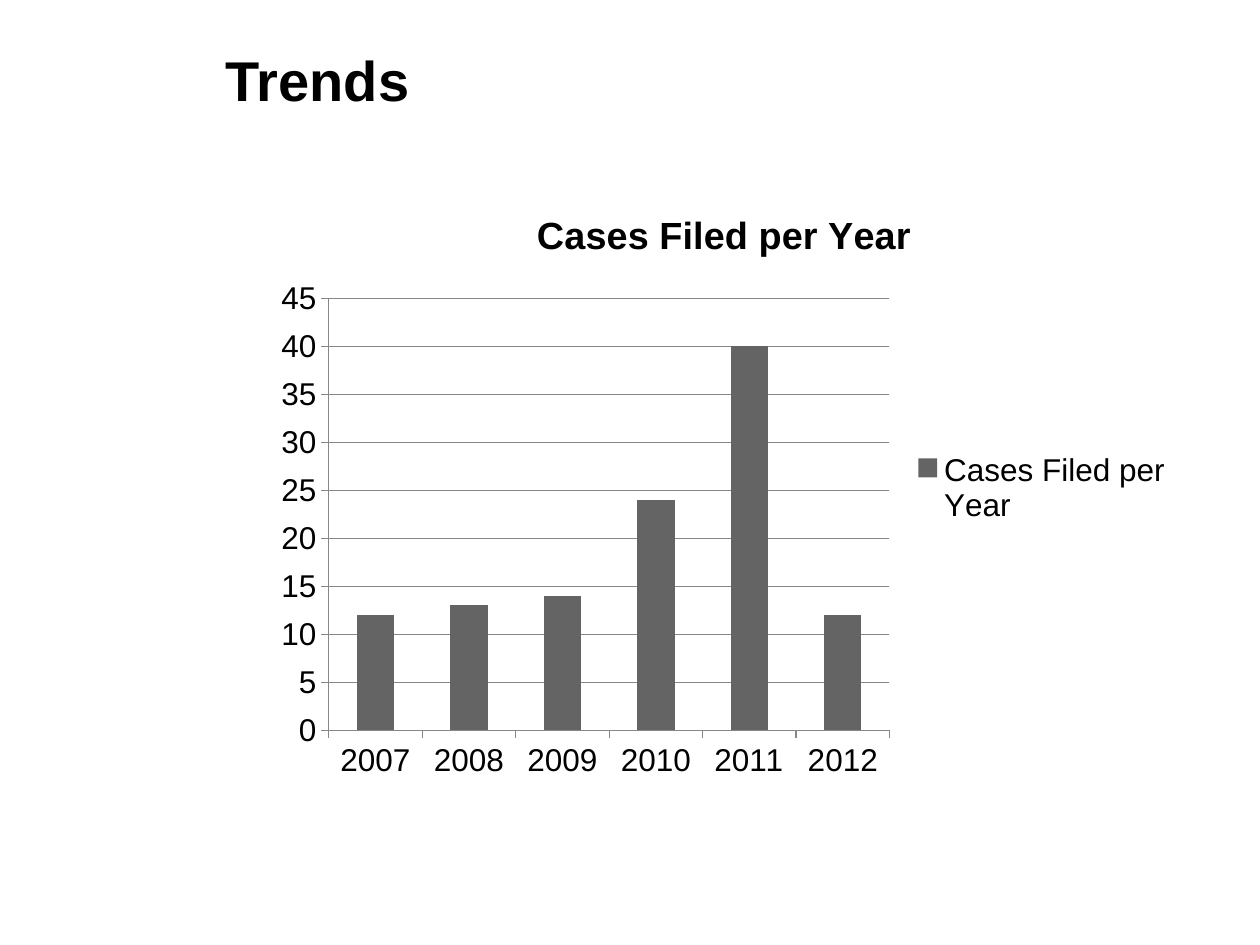
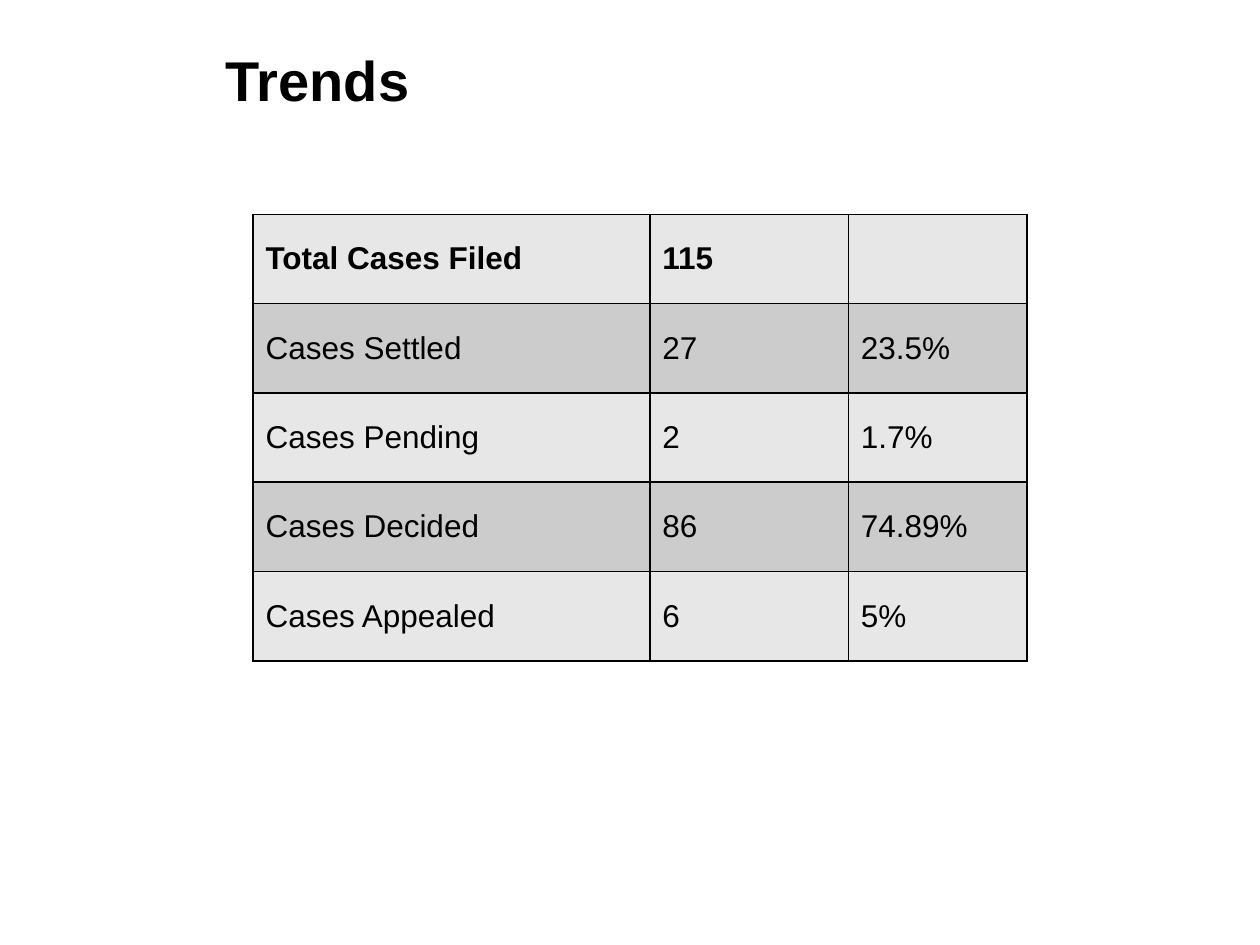
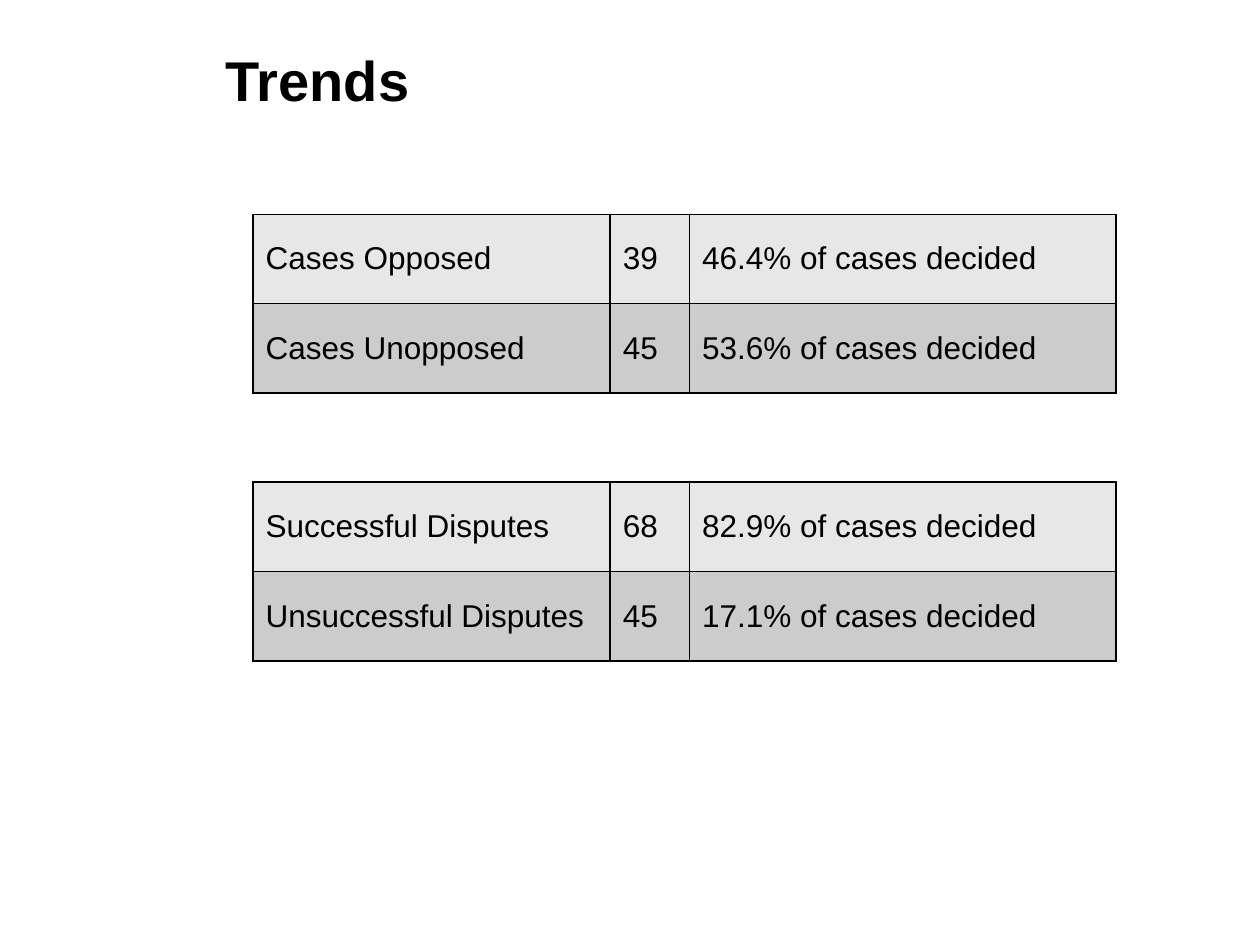
"""Builds three slides on case trends: a column chart and three tables."""
import pptx
import pptx.chart.data
import pptx.dml.color
import pptx.enum.chart
import pptx.enum.text
import pptx.oxml
import pptx.oxml.ns
import pptx.util

Cm = pptx.util.Cm
Pt = pptx.util.Pt

HEADING = "Trends"
FILINGS_NAME = "Cases Filed per Year"
FILINGS = {"2007": 12, "2008": 13, "2009": 14, "2010": 24, "2011": 40, "2012": 12}
OUTCOMES = [
    ("Total Cases Filed", "115", ""),
    ("Cases Settled", "27", "23.5%"),
    ("Cases Pending", "2", "1.7%"),
    ("Cases Decided", "86", "74.89%"),
    ("Cases Appealed", "6", "5%"),
]
OPPOSITION = [
    ("Cases Opposed", "39", "46.4% of cases decided"),
    ("Cases Unopposed", "45", "53.6% of cases decided"),
]
DISPUTES = [
    ("Successful Disputes", "68", "82.9% of cases decided"),
    ("Unsuccessful Disputes", "45", "17.1% of cases decided"),
]

FONT = "Arial"
INK = "000000"
BAR = "646464"
AXIS = "878787"
BANDS = ("E7E7E7", "CCCCCC")
BODY_SIZE = 18
TABLE_LEFT, TABLE_TOP, ROW_HEIGHT = 5.1, 4.32, 1.8
OUTCOME_COLUMNS = (8, 4, 3.6)
SHARE_COLUMNS = (7.2, 1.6, 8.6)


def color(hex_code):
    return pptx.dml.color.RGBColor.from_string(hex_code)


def style(font, size=BODY_SIZE, bold=False):
    font.name = FONT
    font.size = Pt(size)
    font.bold = bold
    font.color.rgb = color(INK)


def add_titled_slide(deck):
    slide = deck.slides.add_slide(deck.slide_layouts[6])
    frame = slide.shapes.add_textbox(Cm(4.3), Cm(0), Cm(21.1), Cm(3.18)).text_frame
    frame.word_wrap = True
    frame.vertical_anchor = pptx.enum.text.MSO_ANCHOR.MIDDLE
    frame.text = HEADING
    style(frame.paragraphs[0].runs[0].font, 32, True)
    return slide


def add_borders(cell):
    properties = cell._tc.get_or_add_tcPr()
    for position, side in enumerate(("lnL", "lnR", "lnT", "lnB")):
        border = pptx.oxml.parse_xml(
            f'<a:{side} {pptx.oxml.ns.nsdecls("a")} w="12700"><a:solidFill>'
            f'<a:srgbClr val="{INK}"/></a:solidFill></a:{side}>'
        )
        properties.insert(position, border)


def add_cases_table(slide, rows, columns, top=TABLE_TOP, bold_first=False):
    table = slide.shapes.add_table(
        len(rows), len(columns), Cm(TABLE_LEFT), Cm(top),
        Cm(sum(columns)), Cm(ROW_HEIGHT * len(rows)),
    ).table
    table.first_row = False
    table.horz_banding = False
    for column, width in zip(table.columns, columns):
        column.width = Cm(width)
    for r, row in enumerate(rows):
        table.rows[r].height = Cm(ROW_HEIGHT)
        for c, value in enumerate(row):
            cell = table.cell(r, c)
            cell.text = value
            cell.vertical_anchor = pptx.enum.text.MSO_ANCHOR.MIDDLE
            cell.fill.solid()
            cell.fill.fore_color.rgb = color(BANDS[r % 2])
            for run in cell.text_frame.paragraphs[0].runs:
                style(run.font, bold=bold_first and r == 0)
            add_borders(cell)


def add_filings_chart(slide):
    filings = pptx.chart.data.CategoryChartData()
    filings.categories = list(FILINGS)
    filings.add_series(FILINGS_NAME, list(FILINGS.values()))
    chart = slide.shapes.add_chart(
        pptx.enum.chart.XL_CHART_TYPE.COLUMN_CLUSTERED,
        Cm(5.3), Cm(3.73), Cm(18.6), Cm(12.2), filings,
    ).chart
    style(chart.font)
    chart.has_title = True
    heading = chart.chart_title.text_frame
    heading.text = FILINGS_NAME
    style(heading.paragraphs[0].runs[0].font, 21.6, True)
    chart.has_legend = True
    chart.legend.position = pptx.enum.chart.XL_LEGEND_POSITION.RIGHT
    chart.legend.include_in_layout = False

    for axis in (chart.category_axis, chart.value_axis):
        axis.major_tick_mark = pptx.enum.chart.XL_TICK_MARK.OUTSIDE
        axis.format.line.color.rgb = color(AXIS)
    value_axis = chart.value_axis
    value_axis.minimum_scale, value_axis.maximum_scale = 0, 45
    value_axis.major_unit = 5
    value_axis.major_gridlines.format.line.color.rgb = color(AXIS)

    plot = chart.plots[0]
    plot.gap_width = 150
    plot.vary_by_categories = False
    bars = plot.series[0].format.fill
    bars.solid()
    bars.fore_color.rgb = color(BAR)


def main():
    deck = pptx.Presentation()
    deck.slide_width, deck.slide_height = Cm(25.4), Cm(19.05)
    add_filings_chart(add_titled_slide(deck))
    add_cases_table(add_titled_slide(deck), OUTCOMES, OUTCOME_COLUMNS, bold_first=True)
    shares = add_titled_slide(deck)
    add_cases_table(shares, OPPOSITION, SHARE_COLUMNS)
    disputes_top = TABLE_TOP + ROW_HEIGHT * (len(OPPOSITION) + 1)
    add_cases_table(shares, DISPUTES, SHARE_COLUMNS, disputes_top)
    deck.save("out.pptx")


if __name__ == "__main__":
    main()
